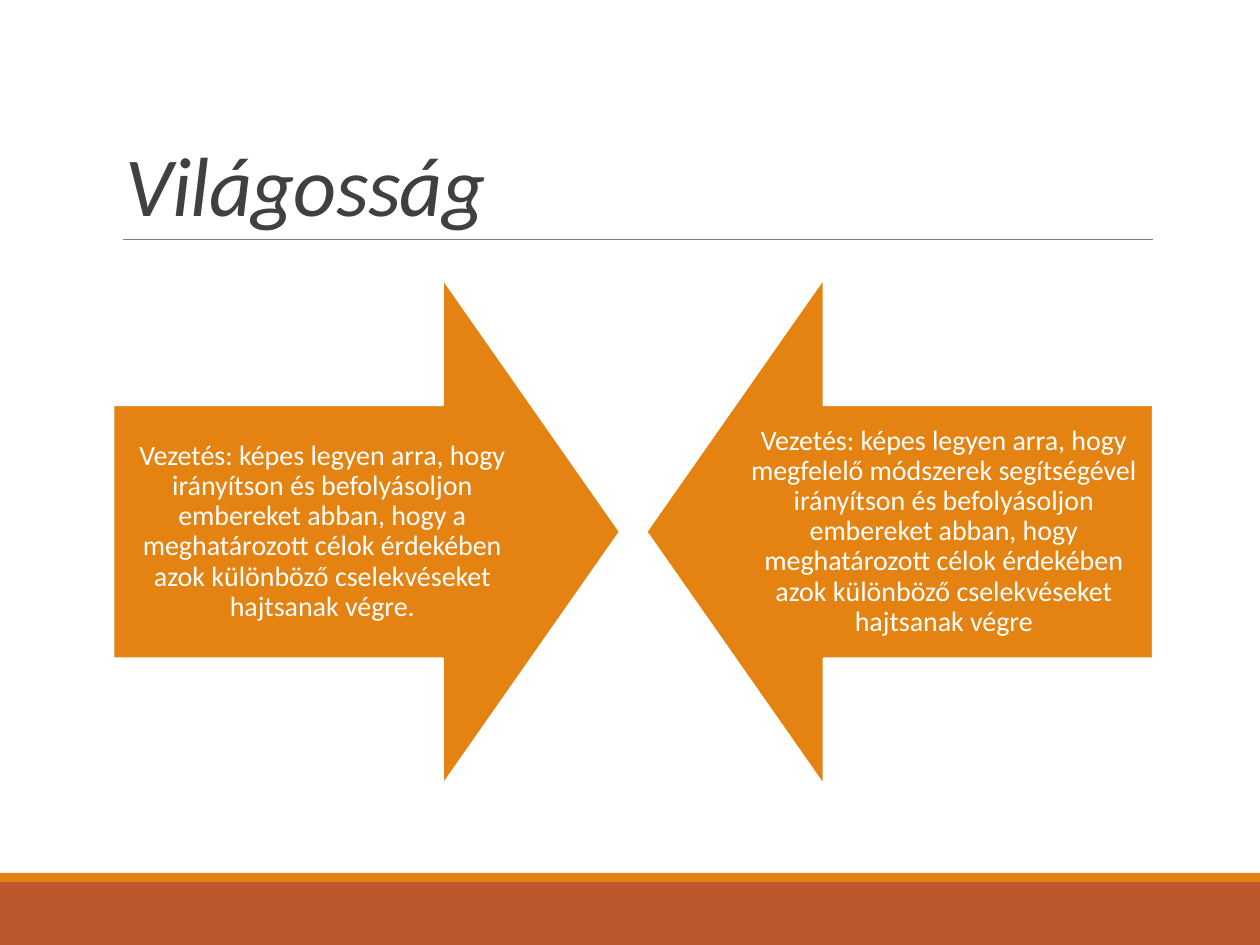
import pptx
import pptx.dml.color
import pptx.enum.shapes
import pptx.enum.text
import pptx.oxml.ns
import pptx.util
from lxml import etree

Pt = pptx.util.Pt
SHAPE = pptx.enum.shapes.MSO_SHAPE
ANCHOR = pptx.enum.text.MSO_ANCHOR
ALIGN = pptx.enum.text.PP_ALIGN

COLORS = {
    "orange": "E48312",
    "rust": "BD582C",
    "rule": "808080",
    "title": "404040",
    "white": "FFFFFF",
}
SLIDE_WIDTH, SLIDE_HEIGHT = 720, 540
CONTENT_LEFT, CONTENT_RIGHT = 64.8, 658.8
ARROW_TOP, ARROW_SIZE = 159.1, 289.5
ARROW_HEAD = 0.35  # share of the arrow's length
TEXT_WIDTH = ARROW_SIZE * (1 - ARROW_HEAD / 2)
TEXT_HEIGHT = ARROW_SIZE / 2

LEFT_TEXT = (
    "Vezetés: képes legyen arra, hogy irányítson és befolyásoljon embereket "
    "abban, hogy a meghatározott célok érdekében azok különböző "
    "cselekvéseket hajtsanak végre."
)
RIGHT_TEXT = (
    "Vezetés: képes legyen arra, hogy megfelelő módszerek segítségével "
    "irányítson és befolyásoljon embereket abban, hogy meghatározott célok "
    "érdekében azok különböző cselekvéseket hajtsanak végre"
)


def rgb(name):
    return pptx.dml.color.RGBColor.from_string(COLORS[name])


def add_filled_shape(slide, kind, left, top, width, height, color):
    shape = slide.shapes.add_shape(kind, Pt(left), Pt(top), Pt(width), Pt(height))
    shape.shadow.inherit = False
    shape.fill.solid()
    shape.fill.fore_color.rgb = rgb(color)
    shape.line.fill.background()
    return shape


def add_rule(slide, left, right, y):
    line = slide.shapes.add_connector(
        pptx.enum.shapes.MSO_CONNECTOR.STRAIGHT, Pt(left), Pt(y), Pt(right), Pt(y))
    line.line.color.rgb = rgb("rule")
    line.line.width = Pt(0.5)
    properties = line._element.spPr
    etree.SubElement(properties, pptx.oxml.ns.qn("a:effectLst"))


def add_text(slide, text, left, top, width, height, size, color, spacing, anchor):
    box = slide.shapes.add_textbox(Pt(left), Pt(top), Pt(width), Pt(height))
    frame = box.text_frame
    frame.text = text
    frame.word_wrap = True
    frame.vertical_anchor = anchor
    paragraph = frame.paragraphs[0]
    paragraph.line_spacing = spacing
    font = paragraph.runs[0].font
    font.name = "Calibri"
    font.size = Pt(size)
    font.color.rgb = rgb(color)
    return frame


def add_title(slide, text):
    frame = add_text(slide, text, CONTENT_LEFT, 22.5, CONTENT_RIGHT - CONTENT_LEFT,
                     114.3, 48, "title", 0.85, ANCHOR.BOTTOM)
    run = frame.paragraphs[0].runs[0]
    run.font.italic = True
    # Letter spacing in hundredths of a point
    run._r.get_or_add_rPr().set("spc", "-50")


def add_arrow(slide, text, left, rotation, text_left):
    arrow = add_filled_shape(slide, SHAPE.DOWN_ARROW, left, ARROW_TOP,
                             ARROW_SIZE, ARROW_SIZE, "orange")
    arrow.rotation = rotation
    arrow.adjustments[0] = 0.5
    arrow.adjustments[1] = ARROW_HEAD
    arrow.line.color.rgb = rgb("white")
    arrow.line.width = Pt(1.25)

    # Upright label over the shaft
    frame = add_text(slide, text, text_left, ARROW_TOP + TEXT_HEIGHT / 2, TEXT_WIDTH,
                     TEXT_HEIGHT, 16, "white", 0.9, ANCHOR.MIDDLE)
    frame.margin_left = frame.margin_right = Pt(8.96)
    frame.margin_top = frame.margin_bottom = Pt(8.96)
    frame.paragraphs[0].alignment = ALIGN.CENTER


def main():
    presentation = pptx.Presentation()
    presentation.slide_width = Pt(SLIDE_WIDTH)
    presentation.slide_height = Pt(SLIDE_HEIGHT)
    slide = presentation.slides.add_slide(presentation.slide_layouts[6])

    # Footer bands
    add_filled_shape(slide, SHAPE.RECTANGLE, 0, 504, SLIDE_WIDTH, 36, "rust")
    add_filled_shape(slide, SHAPE.RECTANGLE, 0, 498.8, SLIDE_WIDTH, 5.2, "orange")

    # Heading
    add_rule(slide, 70.4, CONTENT_RIGHT, 136.8)
    add_title(slide, "Világosság")

    # Arrows facing each other
    add_arrow(slide, LEFT_TEXT, CONTENT_LEFT, 270, CONTENT_LEFT)
    add_arrow(slide, RIGHT_TEXT, CONTENT_RIGHT - ARROW_SIZE, 90,
              CONTENT_RIGHT - TEXT_WIDTH)

    presentation.save("out.pptx")


if __name__ == "__main__":
    main()
